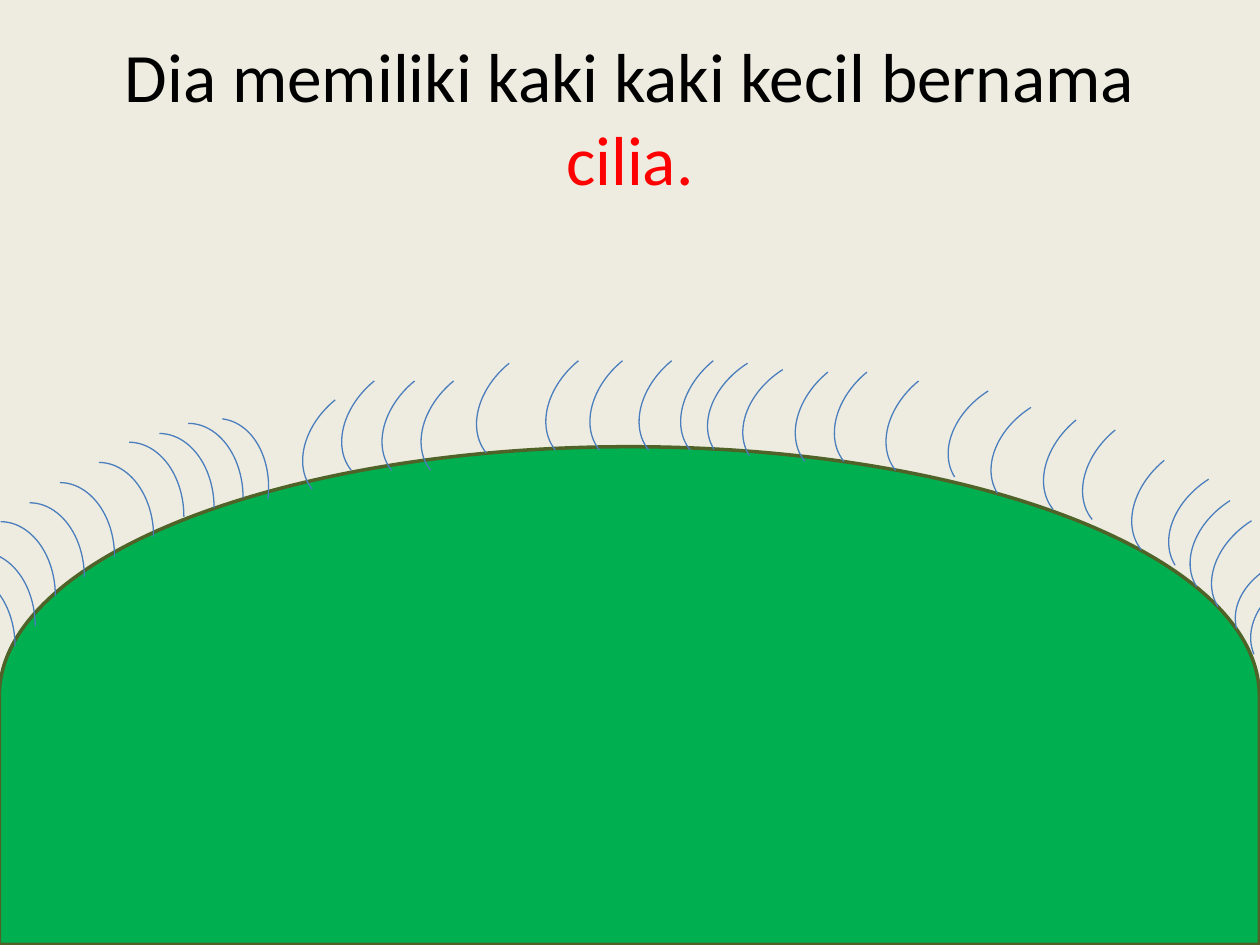
from pptx import Presentation
from pptx.dml.color import RGBColor
from pptx.enum.shapes import MSO_SHAPE
from pptx.enum.text import MSO_ANCHOR, PP_ALIGN
from pptx.util import Inches, Pt

ARC, DELAY = MSO_SHAPE.ARC, MSO_SHAPE.FLOWCHART_DELAY
MIDDLE, CENTER = MSO_ANCHOR.MIDDLE, PP_ALIGN.CENTER

TITLE = [("Dia memiliki kaki kaki kecil bernama ", "000000"), ("cilia.", "FF0000")]
TITLE_FONT = {"name": "Calibri", "size": Pt(39.6)}
CILIUM_SIZE = (0.87, 1.18)
CILIA = {
    0: [(0.35, 3.67), (0.59, 3.51), (0.83, 3.44), (1.06, 3.36), (0.04, 3.83),
        (-0.2, 3.99), (-0.43, 4.14), (-0.59, 4.38), (-0.75, 4.54)],
    6.9: [(1.26, 3.32)],
    230.8: [(2.5, 2.92), (2.81, 2.77), (3.13, 2.77), (3.44, 2.77), (3.88, 2.63),
            (4.43, 2.61), (4.78, 2.61), (5.17, 2.61), (5.5, 2.61), (6.41, 2.7),
            (6.72, 2.7), (7.13, 2.77), (8.38, 3.08), (8.69, 3.16), (9.08, 3.4)],
    237.7: [(5.73, 2.66), (6.01, 2.71), (7.64, 2.88), (7.98, 3.01),
            (9.39, 3.58), (9.56, 3.75), (9.73, 3.91)],
    246.9: [(10.06, 4.37)],
    255.5: [(9.95, 4.25)],
}


def rgb(color):
    return RGBColor.from_string(color)


def add_outline(s, kind, box, rotation, line, width, fill=None):
    sp = s.shapes.add_shape(kind, *map(Inches, box))
    sp.shadow.inherit = False
    sp.rotation = rotation
    sp.line.color.rgb = rgb(line)
    sp.line.width = Pt(width)
    if fill:
        sp.fill.solid()
        sp.fill.fore_color.rgb = rgb(fill)
    else:
        sp.fill.background()


def add_title(s):
    tf = s.shapes.add_textbox(*map(Inches, (0.5, 0.3, 9, 1.25))).text_frame
    tf.word_wrap = True
    tf.vertical_anchor = MIDDLE
    p = tf.paragraphs[0]
    p.alignment = CENTER
    for text, color in TITLE:
        r = p.add_run()
        r.text = text
        r.font.color.rgb = rgb(color)
        for name, value in TITLE_FONT.items():
            setattr(r.font, name, value)


def main():
    prs = Presentation()
    prs.slide_width, prs.slide_height = Inches(10), Inches(7.5)
    s = prs.slides.add_slide(prs.slide_layouts[6])
    s.background.fill.solid()
    s.background.fill.fore_color.rgb = rgb("EEECE1")
    add_title(s)
    add_outline(s, DELAY, (3.02, 0.52, 3.95, 10), 270, "4F6228", 2, "00B050")
    for rotation, places in CILIA.items():
        for place in places:
            add_outline(s, ARC, place + CILIUM_SIZE, rotation, "4B7EBC", 0.75)
    prs.save("out.pptx")


if __name__ == "__main__":
    main()
